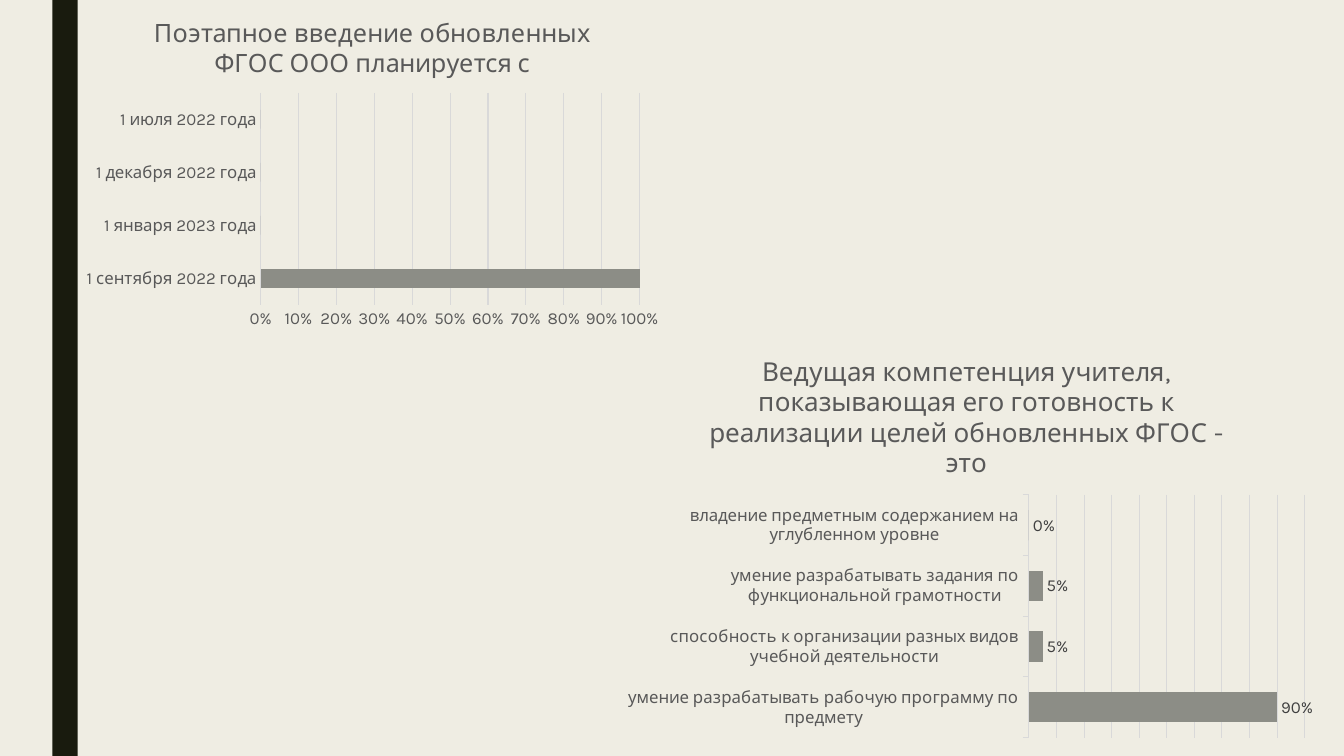
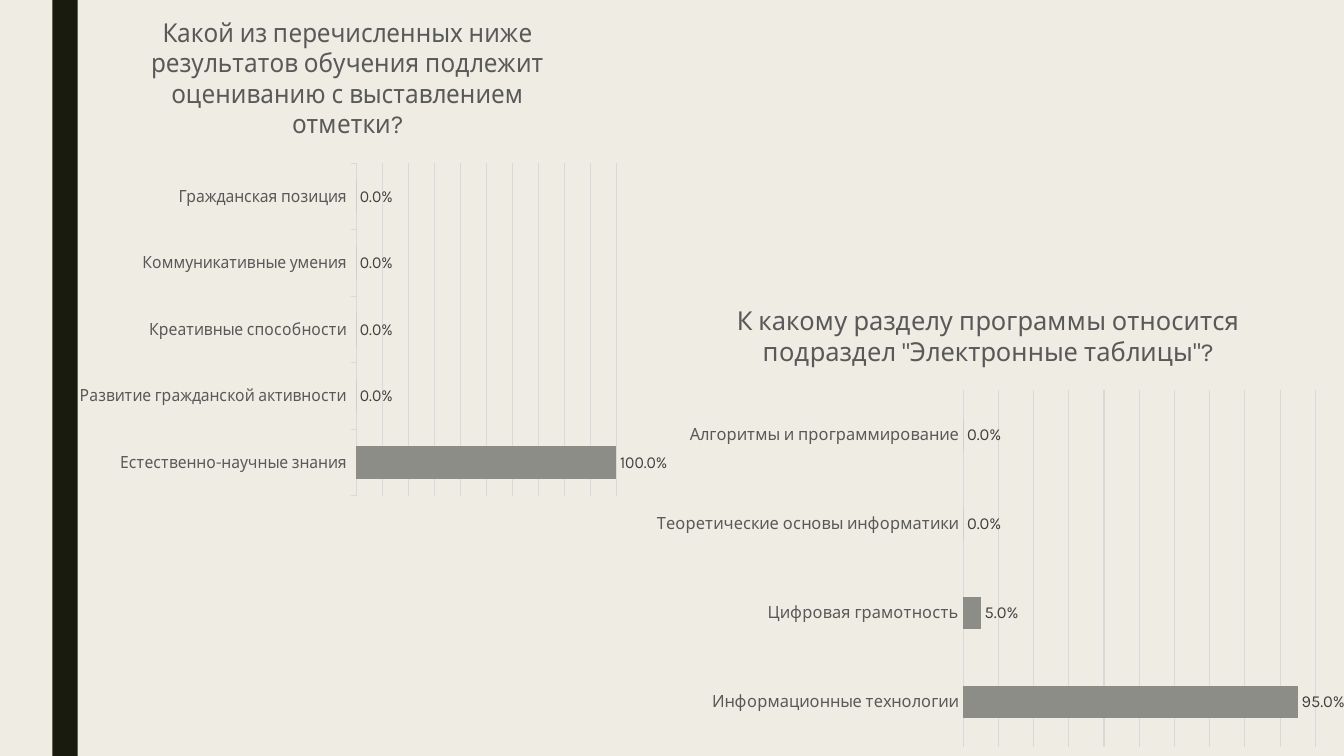
"""Build two slides of bar charts with survey results on the updated standards."""
from pptx import Presentation
from pptx.chart.data import CategoryChartData
from pptx.dml.color import RGBColor
from pptx.enum import chart as ch, shapes
from pptx.oxml import parse_xml
from pptx.oxml.ns import nsdecls
from pptx.util import Inches, Pt

PAPER = RGBColor(0xEF, 0xED, 0xE3)
BAND = RGBColor(0x19, 0x1B, 0x0E)
BAR = RGBColor(0x8C, 0x8D, 0x86)
GRID = RGBColor(0xD9, 0xD9, 0xD9)
TEXT = RGBColor(0x59, 0x59, 0x59)
VALUE = RGBColor(0x40, 0x40, 0x40)
FONT = "Karla"

INTRODUCTION = {
    "title": "Поэтапное введение обновленных ФГОС ООО планируется с",
    "series_name": "Series 1",
    "answers": {
        "1 сентября 2022 года": 1,
        "1 января 2023 года": 0,
        "1 декабря 2022 года": 0,
        "1 июля 2022 года": 0,
    },
    "at": (0.74, 0, 5.91, 3.33),
    "title_size": 18,
    "axis_labels": True,
}
COMPETENCE = {
    "title": "Ведущая компетенция учителя, показывающая его готовность "
             "к реализации целей обновленных ФГОС - это",
    "answers": {
        "умение разрабатывать рабочую программу по предмету": 0.9,
        "способность к организации разных видов учебной деятельности": 0.05,
        "умение разрабатывать задания по функциональной грамотности": 0.05,
        "владение предметным содержанием на углубленном уровне": 0,
    },
    "at": (6.09, 3.33, 6.99, 4.07),
    "gap": 100,
    "ticks": True,
}
ASSESSMENT = {
    "title": "Какой из перечисленных ниже результатов обучения подлежит "
             "оцениванию с выставлением отметки?",
    "answers": {
        "Естественно-научные знания": 1,
        "Развитие гражданской активности": 0,
        "Креативные способности": 0,
        "Коммуникативные умения": 0,
        "Гражданская позиция": 0,
    },
    "at": (0.68, 0, 5.94, 5.02),
    "number_format": "0.0%",
    "gap": 100,
    "ticks": True,
    "title_left": 0.14,
}
SPREADSHEETS = {
    "title": 'К какому разделу программы относится подраздел "Электронные таблицы"?',
    "answers": {
        "Информационные технологии": 0.95,
        "Цифровая грамотность": 0.05,
        "Теоретические основы информатики": 0,
        "Алгоритмы и программирование": 0,
    },
    "at": (6.38, 2.87, 6.96, 4.63),
    "number_format": "0.0%",
    "title_left": 0.13,
}


def style_font(font, size, color=TEXT):
    """Apply the shared typeface with a size and colour."""
    font.name = FONT
    font.size = Pt(size)
    font.bold = False
    font.color.rgb = color


def style_line(line, color):
    """Give a line the thin chart stroke."""
    line.color.rgb = color
    line.width = Pt(0.75)


def add_band(slide):
    """Draw the dark vertical band."""
    band = slide.shapes.add_shape(shapes.MSO_SHAPE.RECTANGLE, Inches(0.52), 0,
                                  Inches(0.25), Inches(7.5))
    band.shadow.inherit = False
    band.fill.solid()
    band.fill.fore_color.rgb = BAND
    band.line.fill.background()


def set_title(chart, title, size, left):
    """Write the chart title, moved to a fraction of the width if given."""
    chart.has_title = True
    paragraph = chart.chart_title.text_frame.paragraphs[0]
    paragraph.text = title
    style_font(paragraph.runs[0].font, size)
    if left is not None:
        layout = chart.element.xpath("c:chart/c:title/c:layout")[0]
        layout.append(parse_xml(
            f'<c:manualLayout {nsdecls("c")}><c:xMode val="edge"/><c:yMode val="edge"/>'
            f'<c:x val="{left}"/><c:y val="0.02"/></c:manualLayout>'))


def style_axes(chart, number_format, ticks, axis_labels):
    """Set the category axis and the percentage axis with its grid."""
    tick = ch.XL_TICK_MARK.OUTSIDE if ticks else ch.XL_TICK_MARK.NONE
    for axis in (chart.category_axis, chart.value_axis):
        axis.major_tick_mark = tick
        axis.minor_tick_mark = ch.XL_TICK_MARK.NONE
        style_font(axis.tick_labels.font, 12)
    style_line(chart.category_axis.format.line, GRID)

    percent = chart.value_axis
    percent.minimum_scale, percent.maximum_scale, percent.major_unit = 0, 1, 0.1
    percent.format.line.fill.background()
    percent.has_major_gridlines = True
    style_line(percent.major_gridlines.format.line, GRID)
    percent.tick_labels.number_format = number_format
    percent.tick_labels.number_format_is_linked = False
    if not axis_labels:
        percent.tick_label_position = ch.XL_TICK_LABEL_POSITION.NONE


def add_value_labels(plot, number_format):
    """Show each value beyond the end of its bar."""
    plot.has_data_labels = True
    labels = plot.data_labels
    labels.show_value = True
    labels.position = ch.XL_LABEL_POSITION.OUTSIDE_END
    labels.number_format = number_format
    labels.number_format_is_linked = False
    style_font(labels.font, 12, VALUE)


def add_survey(slide, title, answers, at, series_name=None, title_size=18.6,
               title_left=None, number_format="0%", gap=182, ticks=False,
               axis_labels=False):
    """Add one question as a bar chart of its answers."""
    data = CategoryChartData(number_format=number_format)
    data.categories = list(answers)
    data.add_series(series_name or title, list(answers.values()))
    chart = slide.shapes.add_chart(ch.XL_CHART_TYPE.BAR_CLUSTERED,
                                   *map(Inches, at), data).chart
    style_font(chart.font, 10, RGBColor(0, 0, 0))
    chart.has_legend = False
    set_title(chart, title, title_size, title_left)
    style_axes(chart, number_format, ticks, axis_labels)

    plot = chart.plots[0]
    plot.gap_width = gap
    plot.vary_by_categories = False
    bars = plot.series[0].format
    bars.fill.solid()
    bars.fill.fore_color.rgb = BAR
    if not axis_labels:
        add_value_labels(plot, number_format)


def main():
    """Build and save the presentation."""
    prs = Presentation()
    prs.slide_width, prs.slide_height = Inches(13.33), Inches(7.5)
    paper = prs.slide_master.background.fill
    paper.solid()
    paper.fore_color.rgb = PAPER
    for surveys in ((INTRODUCTION, COMPETENCE), (ASSESSMENT, SPREADSHEETS)):
        slide = prs.slides.add_slide(prs.slide_layouts[6])
        add_band(slide)
        for survey in surveys:
            add_survey(slide, **survey)
    prs.save("out.pptx")


if __name__ == "__main__":
    main()
